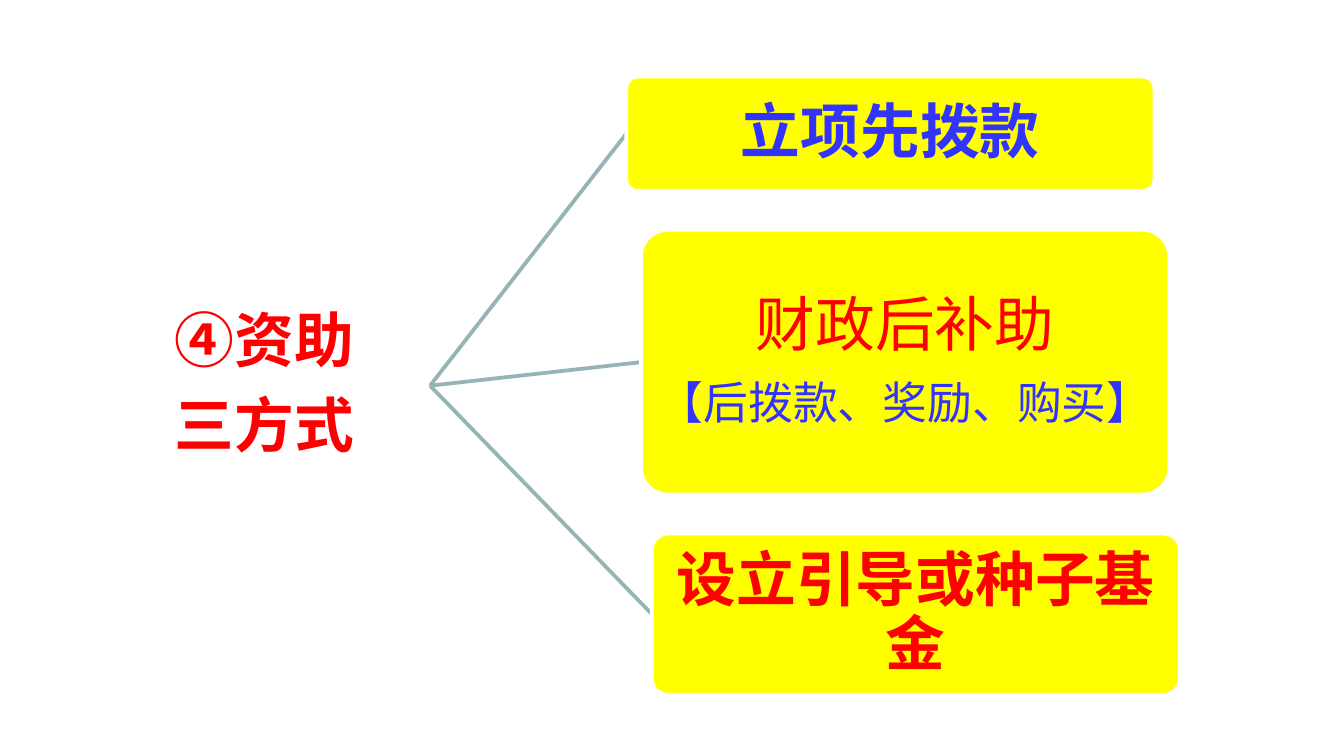
from lxml.etree import SubElement
from pptx import Presentation
from pptx.dml.color import RGBColor
from pptx.enum.shapes import MSO_CONNECTOR, MSO_SHAPE
from pptx.enum.text import MSO_ANCHOR, PP_ALIGN
from pptx.oxml.ns import qn
from pptx.util import Inches, Pt

COLORS = {"white": "FFFFFF", "yellow": "FFFF00", "red": "FF0000",
          "blue": "3333FF", "branch": "96B3B6"}
FONT = "Arial"

# Each line of text: wording, size, colour, bold
ROOT = ((0.74, 0.75, 2.46, 4.24),
        [("④资助", 32, "red", True), ("三方式", 32, "red", True)])
METHODS = [
    ((4.66, 0.57, 3.93, 0.85), [("立项先拨款", 32, "blue", True)]),
    ((4.77, 1.71, 3.93, 1.97), [("财政后补助", 32, "red", False),
                                ("【后拨款、奖励、购买】", 24, "blue", False)]),
    ((4.85, 3.97, 3.93, 1.2), [("设立引导或种子基金", 32, "red", True)]),
]


def rgb(name):
    return RGBColor.from_string(COLORS[name])


def add_node(slide, box, lines, fill):
    """Rounded box with centred lines of text."""
    sp = slide.shapes.add_shape(MSO_SHAPE.ROUNDED_RECTANGLE,
                                *(Inches(v) for v in box))
    sp.adjustments[0] = 0.1
    sp.shadow.inherit = False
    sp.fill.solid()
    sp.fill.fore_color.rgb = rgb(fill)
    sp.line.color.rgb = rgb("white")
    sp.line.width = Pt(2)

    tf = sp.text_frame
    tf.word_wrap = True
    tf.vertical_anchor = MSO_ANCHOR.MIDDLE
    tf.margin_left = tf.margin_right = Inches(0.02)
    tf.margin_top = tf.margin_bottom = Inches(0.02)
    for i, (text, size, color, bold) in enumerate(lines):
        p = tf.add_paragraph() if i else tf.paragraphs[0]
        p.alignment = PP_ALIGN.CENTER
        p.line_spacing = 0.9
        p.space_after = Pt(size * 0.35)
        r = p.add_run()
        r.text = text
        r.font.name = FONT
        r.font.size = Pt(size)
        r.font.bold = bold
        r.font.color.rgb = rgb(color)
    return sp


def add_branch(slide, root, box):
    """Line from the right of the root to the left of a box."""
    left, top, _, height = box
    cxn = slide.shapes.add_connector(
        MSO_CONNECTOR.STRAIGHT,
        root.left + root.width, root.top + root.height // 2,
        Inches(left), Inches(top + height / 2))
    cxn.begin_connect(root, 3)
    cxn.line.color.rgb = rgb("branch")
    cxn.line.width = Pt(2)
    SubElement(cxn.element.find(qn("p:spPr")), qn("a:effectLst"))
    return cxn


def add_tree(slide):
    """Root on the left, one branch for each funding method."""
    root = add_node(slide, *ROOT, "white")
    for box, lines in METHODS:
        # The branch lies beneath the white edge of its box
        cxn = add_branch(slide, root, box)
        sp = add_node(slide, box, lines, "yellow")
        cxn.end_connect(sp, 1)


def main():
    prs = Presentation()
    # 16:9 page
    prs.slide_width = Inches(10)
    prs.slide_height = Inches(10) * 9 // 16
    slide = prs.slides.add_slide(prs.slide_layouts[6])
    add_tree(slide)
    prs.save("out.pptx")


if __name__ == "__main__":
    main()
